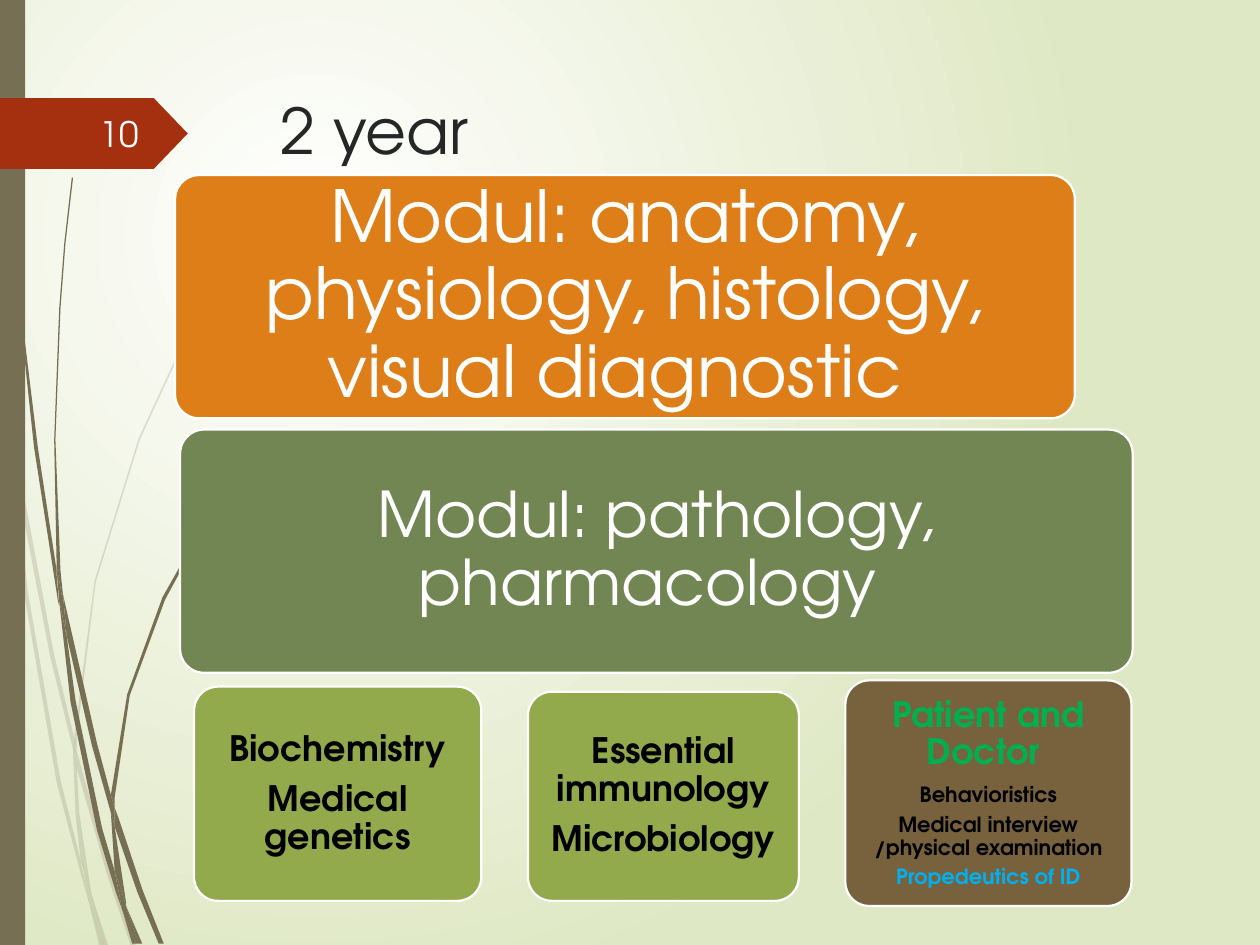
from dataclasses import dataclass

from lxml import etree
from pptx import Presentation
from pptx import util as u
from pptx.dml.color import RGBColor
from pptx.enum import shapes, text
from pptx.oxml import ns


@dataclass(frozen=True)
class Theme:
    font: str = "TeX Gyre Adventor"
    white: str = "FFFFFF"
    black: str = "000000"
    ink: str = "262626"
    meadow: str = "DFE8C4"
    stem: str = "766F54"
    red: str = "A53010"
    orange: str = "DE7E18"
    moss: str = "728653"
    lime: str = "92AA4C"
    brown: str = "77623D"
    green: str = "00B050"
    blue: str = "00B0F0"
    heading: int = 36
    module: int = 41
    course: int = 20
    detail: int = 12


THEME = Theme()
UNIT = u.Inches(0.01)
CORNER = 0.19

PALE_BLADES = [
    [(8, 350), (6, 322), (0, 282), (0, 299), (7, 344)],
    [(40, 522), (59, 599), (59, 586), (43, 520), (10, 345), (12, 376)],
    [(64, 607), (61, 596), (61, 610), (85, 694), (104, 751), (108, 751), (88, 692)],
    [(83, 751), (86, 751), (73, 711)],
    [(64, 683), (48, 619), (22, 469), (12, 376), (8, 350), (19, 470),
     (45, 621), (64, 693), (70, 714), (69, 707)],
    [(58, 599), (60, 646), (64, 683), (67, 692), (73, 711), (72, 706),
     (63, 646), (61, 610), (61, 608)],
    [(61, 584), (76, 462), (111, 349), (159, 245), (187, 198), (201, 175),
     (217, 154), (217, 153), (201, 175), (186, 197), (158, 244), (110, 348),
     (75, 461), (59, 584), (59, 586), (61, 596)],
    [(70, 714), (79, 751), (82, 751)],
    [(61, 608), (61, 610), (61, 596), (59, 586), (58, 599)],
    [(67, 692), (65, 683), (69, 707), (70, 714), (82, 751), (83, 751), (73, 711)],
]

DARK_BLADES = [
    [(5, 110), (14, 233), (27, 355), (46, 477), (47, 481), (45, 457), (45, 453),
     (30, 355), (15, 232), (6, 109), (4, 48), (3, 0), (2, 0), (3, 48)],
    [(73, 592), (88, 645), (88, 633), (88, 631), (77, 590), (50, 472), (53, 505)],
    [(94, 649), (91, 641), (91, 656), (109, 708), (126, 749), (130, 749), (113, 706)],
    [(91, 691), (81, 657), (60, 556), (53, 505), (47, 477), (56, 557),
     (77, 659), (92, 708), (97, 722), (96, 717)],
    [(50, 472), (48, 453), (44, 349), (48, 245), (52, 193), (58, 141), (57, 141),
     (51, 193), (47, 245), (43, 349), (45, 449), (49, 472)],
    [(110, 749), (113, 749), (100, 719)],
    [(47, 477), (53, 505), (50, 472), (49, 472), (45, 449), (45, 453)],
    [(91, 633), (103, 552), (131, 476), (169, 406), (191, 374), (203, 359),
     (216, 344), (215, 344), (203, 358), (191, 373), (168, 405), (129, 474),
     (101, 551), (88, 631), (91, 641)],
    [(97, 722), (105, 749), (108, 749)],
    [(88, 645), (91, 691), (96, 706), (100, 719), (100, 716), (91, 656), (90, 651)],
    [(88, 645), (90, 651), (91, 656), (91, 641), (88, 631), (88, 633)],
    [(96, 706), (91, 691), (96, 717), (97, 722), (108, 749), (110, 749), (100, 719)],
]


def paint_background(slide):
    fill = slide.background.fill
    fill.gradient()
    for stop, color in zip(fill.gradient_stops, (THEME.white, THEME.meadow)):
        stop.color.rgb = RGBColor.from_string(color)
    gradient = slide.background._cSld.find(".//" + ns.qn("a:gradFill"))
    gradient.remove(gradient.find(ns.qn("a:lin")))
    glow = etree.SubElement(gradient, ns.qn("a:path"), path="circle")
    etree.SubElement(glow, ns.qn("a:fillToRect"),
                     l="50000", t="50000", r="100000", b="100000")


def paint(part, color, outline=None):
    part.shadow.inherit = False
    part.fill.solid()
    part.fill.fore_color.rgb = RGBColor.from_string(color)
    if outline:
        part.line.color.rgb = RGBColor.from_string(outline)
        part.line.width = u.Pt(1.25)
    else:
        part.line.fill.background()


def add_blade(slide, points, opacity):
    outline = slide.shapes.build_freeform(*points[0], scale=UNIT)
    outline.add_line_segments(points[1:], close=True)
    blade = outline.convert_to_shape()
    paint(blade, THEME.stem)
    if opacity < 100:
        tint = blade._element.spPr.find(".//" + ns.qn("a:srgbClr"))
        etree.SubElement(tint, ns.qn("a:alpha"), val=str(opacity * 1000))


def add_block(slide, kind, box, color, outline=None):
    block = slide.shapes.add_shape(kind, *map(u.Inches, box))
    paint(block, color, outline)
    return block


def style(paragraph, size, color, bold=False):
    for run in paragraph.runs:
        run.font.name = THEME.font
        run.font.size = u.Pt(size)
        run.font.bold = bold
        run.font.color.rgb = RGBColor.from_string(color)


def add_label(slide, box, words, size, color, align, anchor):
    frame = slide.shapes.add_textbox(*map(u.Inches, box)).text_frame
    frame.word_wrap = True
    frame.vertical_anchor = anchor
    frame.text = words
    frame.paragraphs[0].alignment = align
    style(frame.paragraphs[0], size, color)


def add_card(slide, box, color, inset, lines, bold):
    card = add_block(slide, shapes.MSO_SHAPE.ROUNDED_RECTANGLE, box, color, THEME.white)
    card.adjustments[0] = CORNER / box[3]
    frame = card.text_frame
    frame.word_wrap = True
    frame.vertical_anchor = text.MSO_ANCHOR.MIDDLE
    margin = u.Inches(inset - 0.29 * CORNER)
    frame.margin_left = frame.margin_right = margin
    frame.margin_top = frame.margin_bottom = margin
    frame.text = "\n".join(words for words, size, ink in lines)
    for paragraph, (words, size, ink) in zip(frame.paragraphs, lines):
        paragraph.alignment = text.PP_ALIGN.CENTER
        paragraph.line_spacing = 0.9
        paragraph.space_after = u.Pt(round(size * 0.35))
        style(paragraph, size, ink, bold)


def main():
    deck = Presentation()
    deck.slide_width, deck.slide_height = u.Inches(10), u.Inches(7.5)
    slide = deck.slides.add_slide(deck.slide_layouts[6])
    paint_background(slide)

    for blades, opacity in ((PALE_BLADES, 20), (DARK_BLADES, 100)):
        for points in blades:
            add_blade(slide, points, opacity)
    add_block(slide, shapes.MSO_SHAPE.RECTANGLE, (0, 0, 0.2, 7.5), THEME.stem)
    page_tag = add_block(slide, shapes.MSO_SHAPE.PENTAGON, (0, 0.78, 1.49, 0.56), THEME.red)
    page_tag.adjustments[0] = 0.48

    add_label(slide, (2.13, 0.68, 7.21, 1.4), "2 year", THEME.heading, THEME.ink,
              text.PP_ALIGN.LEFT, text.MSO_ANCHOR.TOP)
    add_label(slide, (0.56, 0.86, 0.64, 0.4), "10", THEME.course, THEME.white,
              text.PP_ALIGN.RIGHT, text.MSO_ANCHOR.MIDDLE)

    add_card(slide, (1.39, 1.39, 7.14, 1.93), THEME.orange, 0.23,
             [("Modul: anatomy, physiology, histology, visual diagnostic ",
               THEME.module, THEME.white)], False)
    add_card(slide, (1.43, 3.41, 7.56, 1.93), THEME.moss, 0.21,
             [("Modul: pathology, pharmacology ", THEME.heading, THEME.white)], False)
    add_card(slide, (1.54, 5.45, 2.28, 1.7), THEME.lime, 0.11,
             [("Biochemistry", THEME.course, THEME.black),
              ("Medical genetics", THEME.course, THEME.black)], True)
    add_card(slide, (4.19, 5.49, 2.15, 1.66), THEME.lime, 0.11,
             [("Essential immunology", THEME.course, THEME.black),
              ("Microbiology", THEME.course, THEME.black)], True)
    add_card(slide, (6.71, 5.4, 2.27, 1.79), THEME.brown, 0.11,
             [("Patient and Doctor ", THEME.course, THEME.green),
              ("Behavioristics", THEME.detail, THEME.black),
              ("Medical interview /physical examination", THEME.detail, THEME.black),
              ("Propedeutics of ID", THEME.detail, THEME.blue)], True)

    deck.save("out.pptx")


if __name__ == "__main__":
    main()
